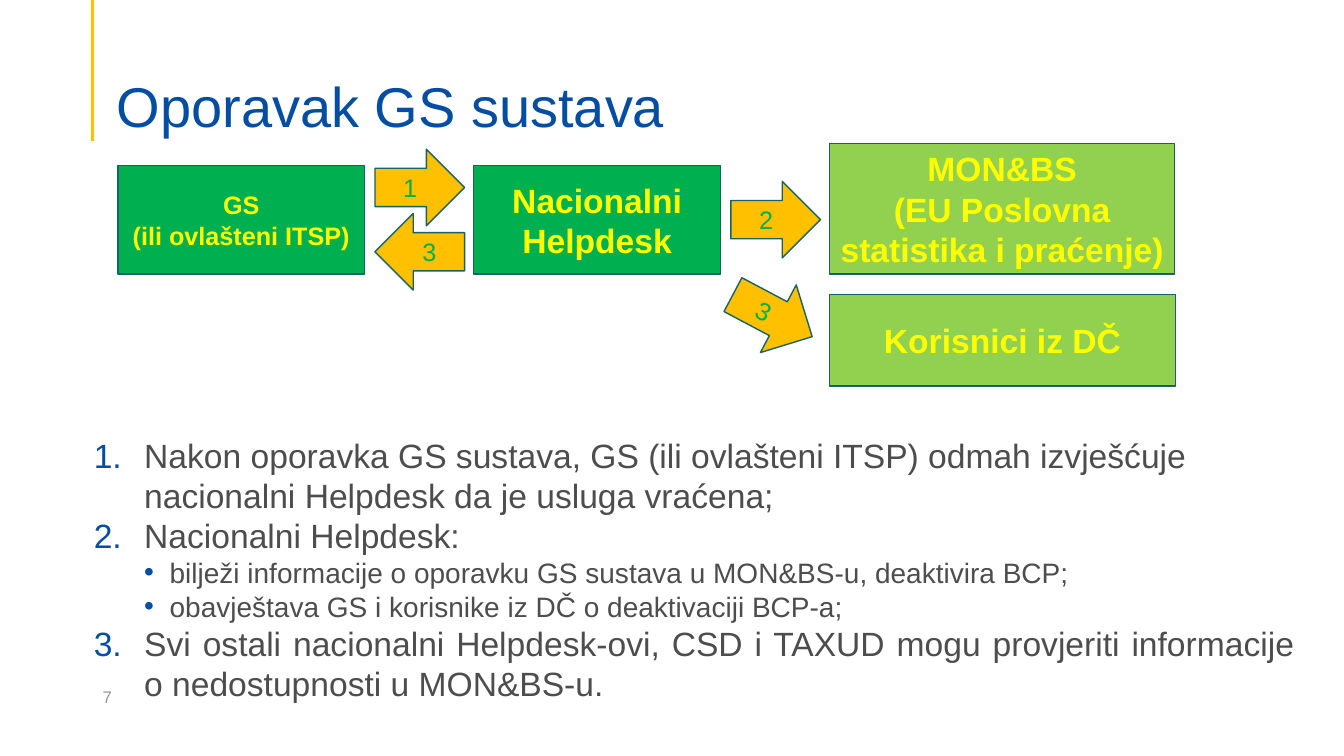
from lxml.etree import SubElement
from pptx import Presentation
from pptx.dml.color import RGBColor
from pptx.enum.shapes import MSO_CONNECTOR, MSO_SHAPE
from pptx.enum.text import MSO_ANCHOR, MSO_AUTO_SIZE, PP_ALIGN
from pptx.oxml.ns import qn
from pptx.util import Cm, Pt


def color(value):
    return RGBColor.from_string(value)


class SlideBuilder:
    font_name = "Arial"
    blue = "034EA2"
    gray = "4D4D4D"
    light_gray = "979797"
    yellow = "FFFF00"
    green = "00B050"
    light_green = "92D050"
    gold = "FFC000"
    outline = "166267"

    def __init__(self, presentation):
        self.slide = presentation.slides.add_slide(presentation.slide_layouts[1])

    def place(self, shape, left, top, width, height):
        shape.left, shape.top = Cm(left), Cm(top)
        shape.width, shape.height = Cm(width), Cm(height)

    def frame(self, shape, anchor):
        frame = shape.text_frame
        frame.word_wrap = True
        frame.auto_size = MSO_AUTO_SIZE.NONE
        frame.vertical_anchor = anchor
        return frame

    def add_text(self, paragraph, text, size, hex_color, bold=False, align=PP_ALIGN.LEFT):
        paragraph.alignment = align
        paragraph.space_before = Pt(0)
        run = paragraph.add_run()
        run.text = text
        run.font.name = self.font_name
        run.font.size = Pt(size)
        run.font.bold = bold
        run.font.color.rgb = color(hex_color)

    def paragraphs(self, frame, count):
        for _ in range(count - 1):
            frame.add_paragraph()
        return frame.paragraphs

    def title(self, text, *bounds):
        shape = self.slide.shapes.title
        self.place(shape, *bounds)
        frame = self.frame(shape, MSO_ANCHOR.BOTTOM)
        frame.margin_bottom = 0
        paragraph = frame.paragraphs[0]
        paragraph.line_spacing = 0.9
        self.add_text(paragraph, text, 40, self.blue)

    def bullet(self, paragraph, level):
        properties = paragraph._p.get_or_add_pPr()
        indent = Cm(0.64 if level else 1.27)
        properties.set("marL", str(Cm(1.91 if level else 1.27)))
        properties.set("indent", str(-indent))
        bullet_color = SubElement(properties, qn("a:buClr"))
        SubElement(bullet_color, qn("a:srgbClr")).set("val", self.blue)
        SubElement(properties, qn("a:buFont")).set("typeface", self.font_name)
        if level:
            SubElement(properties, qn("a:buChar")).set("char", "•")
        else:
            SubElement(properties, qn("a:buAutoNum")).set("type", "arabicPeriod")

    def body(self, items, *bounds):
        shape = self.slide.placeholders[1]
        self.place(shape, *bounds)
        frame = self.frame(shape, MSO_ANCHOR.TOP)
        for paragraph, (level, align, text) in zip(self.paragraphs(frame, len(items)), items):
            paragraph.level = level
            self.add_text(paragraph, text, 20 if level else 24, self.gray, align=align)
            self.bullet(paragraph, level)

    def shape(self, kind, fill, lines, size, text_color, bold, *bounds):
        shape = self.slide.shapes.add_shape(kind, *map(Cm, bounds))
        shape.shadow.inherit = False
        shape.fill.solid()
        shape.fill.fore_color.rgb = color(fill)
        shape.line.color.rgb = color(self.outline)
        shape.line.width = Pt(1)
        frame = self.frame(shape, MSO_ANCHOR.MIDDLE)
        for paragraph, text in zip(self.paragraphs(frame, len(lines)), lines):
            self.add_text(paragraph, text, size, text_color, bold, PP_ALIGN.CENTER)
        return shape

    def box(self, fill, lines, size, *bounds):
        self.shape(MSO_SHAPE.RECTANGLE, fill, lines, size, self.yellow, True, *bounds)

    def arrow(self, kind, label, left, top, rotation=0):
        shape = self.shape(kind, self.gold, [label], 18, self.green, False, left, top, 2.26, 1.93)
        shape.rotation = rotation

    def line(self, start_x, start_y, end_x, end_y):
        connector = self.slide.shapes.add_connector(
            MSO_CONNECTOR.STRAIGHT, Cm(start_x), Cm(start_y), Cm(end_x), Cm(end_y))
        connector.line.color.rgb = color(self.gold)
        connector.line.width = Pt(2.25)
        SubElement(connector._element.spPr, qn("a:effectLst"))

    def label(self, text, size, hex_color, *bounds):
        shape = self.slide.shapes.add_textbox(*map(Cm, bounds))
        frame = self.frame(shape, MSO_ANCHOR.MIDDLE)
        self.add_text(frame.paragraphs[0], text, size, hex_color)


def main():
    presentation = Presentation()
    presentation.slide_width = Cm(33.87)
    presentation.slide_height = Cm(19.05)
    builder = SlideBuilder(presentation)

    builder.line(2.34, 0, 2.34, 3.56)
    builder.title("Oporavak GS sustava", 2.69, 1.35, 29.21, 2.18)
    builder.body([
        (0, PP_ALIGN.LEFT, "Nakon oporavka GS sustava, GS (ili ovlašteni ITSP) odmah izvješćuje "
                           "nacionalni Helpdesk da je usluga vraćena;"),
        (0, PP_ALIGN.JUSTIFY, "Nacionalni Helpdesk:"),
        (1, PP_ALIGN.JUSTIFY, "bilježi informacije o oporavku GS sustava u MON&BS-u, deaktivira BCP;"),
        (1, PP_ALIGN.JUSTIFY, "obavještava GS i korisnike iz DČ o deaktivaciji BCP-a;"),
        (0, PP_ALIGN.JUSTIFY, "Svi ostali nacionalni Helpdesk-ovi, CSD i TAXUD mogu provjeriti "
                              "informacije o nedostupnosti u MON&BS-u."),
    ], 2.11, 10.82, 30.76, 7.34)

    first_left, step = 2.97, 8.97
    second_left, third_left = first_left + step, first_left + 2 * step
    builder.box(builder.green, ["GS", "(ili ovlašteni ITSP)"], 18, first_left, 4.17, 6.22, 2.74)
    builder.box(builder.green, ["Nacionalni Helpdesk"], 24, second_left, 4.17, 6.22, 2.74)
    builder.box(builder.light_green, ["MON&BS", "(EU Poslovna statistika i praćenje)"], 24,
                third_left, 3.61, 8.69, 3.3)
    builder.box(builder.light_green, ["Korisnici iz DČ"], 24, third_left, 7.42, 8.71, 2.31)

    builder.arrow(MSO_SHAPE.RIGHT_ARROW, "1", 9.45, 3.76)
    builder.arrow(MSO_SHAPE.RIGHT_ARROW, "3", 18.34, 6.99, 27.9)
    builder.arrow(MSO_SHAPE.RIGHT_ARROW, "2", 18.42, 4.57)
    builder.arrow(MSO_SHAPE.LEFT_ARROW, "3", 9.45, 5.38)
    builder.label("7", 12, builder.light_gray, 2.34, 17.04, 7.62, 1.02)

    presentation.save("out.pptx")


if __name__ == "__main__":
    main()
